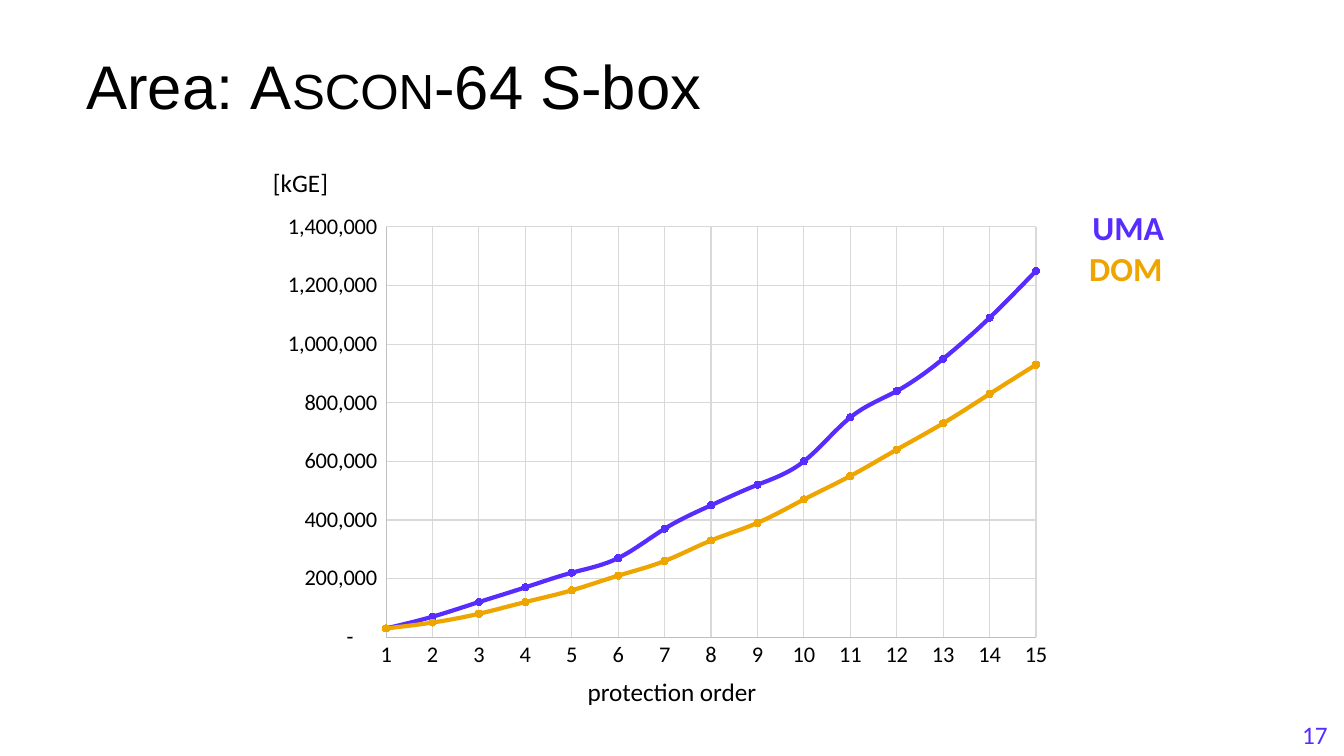
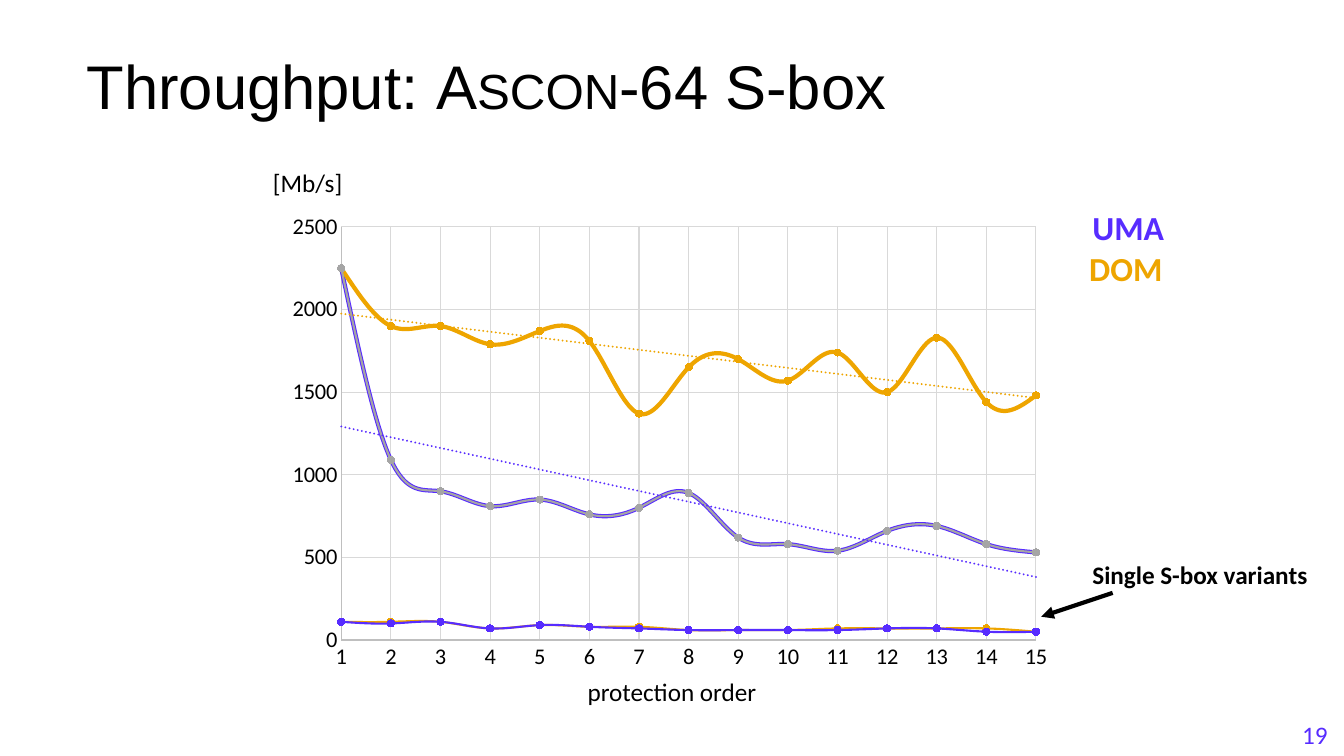
from dataclasses import dataclass

import lxml.etree
import pptx
import pptx.chart.data
import pptx.dml.color
import pptx.enum.chart
import pptx.enum.shapes
import pptx.enum.text
import pptx.oxml
import pptx.oxml.ns
import pptx.util

Cm, Pt = pptx.util.Cm, pptx.util.Pt
qn = pptx.oxml.ns.qn
LEFT = pptx.enum.text.PP_ALIGN.LEFT
CENTER = pptx.enum.text.PP_ALIGN.CENTER


@dataclass(frozen=True)
class Theme:
    ink: str = "000000"
    uma: str = "572CFF"
    dom: str = "EEA500"
    single: str = "A5A5A5"
    axis: str = "BFBFBF"
    grid: str = "D9D9D9"
    title_font: str = "Arial"
    body_font: str = "Calibri"
    title_size: int = 44
    legend_size: int = 24
    label_size: int = 18
    tick_size: int = 16
    thick: float = 3
    thin: float = 1.5
    hairline: float = 0.75
    marker_size: int = 5


@dataclass(frozen=True)
class Box:
    """A rectangle in centimetres."""
    left: float
    top: float
    width: float
    height: float

    def lengths(self):
        return [Cm(v) for v in (self.left, self.top, self.width, self.height)]

    def inner(self, left, top, width, height):
        """A box placed relative to this one."""
        return Box(self.left + left, self.top + top, width, height)


@dataclass(frozen=True)
class Curve:
    values: list
    color: str
    width: float
    trend: bool = False


THEME = Theme()
PAGE = Box(0, 0, 33.87, 19.05)
TITLE = PAGE.inner(1.93, 0.41, 31.93, 3.68)
PAGE_NUMBER = PAGE.inner(32.4, 18, 1.47, 1.02)
UNIT = PAGE.inner(6.63, 4.09, 3, 1.02)
X_CAPTION = PAGE.inner(0, 16.92, PAGE.width, 1.02)
LEGEND = PAGE.inner(27.2, 5.1, 3, 2.3)
SINGLE_NOTE = PAGE.inner(26.24, 13.97, 7.4, 1.57)

ORDERS = range(1, 16)
ACCOUNTING = '_-* #,##0_-;\\-* #,##0_-;_-* "-"??_-;_-@_-'
UMA_RATE = [2250, 1090, 900, 810, 850, 760, 800, 890, 620, 580, 540, 660,
            690, 580, 530]

AREA = {
    "number": 17,
    "topic": "Area: ",
    "unit": "[kGE]",
    "chart_box": PAGE.inner(6.35, 5.16, 20.45, 11.96),
    "plot_box": PAGE.inner(9.73, 5.72, 16.38, 10.34),
    "top": 1400000,
    "step": 200000,
    "number_format": ACCOUNTING,
    "curves": [
        Curve([30000, 50000, 80000, 120000, 160000, 210000, 260000, 330000,
               390000, 470000, 550000, 640000, 730000, 830000, 930000],
              THEME.dom, THEME.thick),
        Curve([30000, 70000, 120000, 170000, 220000, 270000, 370000, 450000,
               520000, 600000, 750000, 840000, 950000, 1090000, 1250000],
              THEME.uma, THEME.thick),
    ],
}
THROUGHPUT = {
    "number": 19,
    "topic": "Throughput: ",
    "unit": "[Mb/s]",
    "chart_box": PAGE.inner(6.99, 5.16, 19.81, 12.01),
    "plot_box": PAGE.inner(8.6, 5.72, 17.51, 10.41),
    "top": 2500,
    "step": 500,
    "number_format": "General",
    "curves": [
        Curve([110, 100, 110, 70, 90, 80, 70, 60, 60, 60, 60, 70, 70, 50, 50],
              THEME.uma, THEME.thin),
        Curve([110, 110, 110, 70, 90, 80, 80, 60, 60, 60, 70, 70, 70, 70, 50],
              THEME.dom, THEME.thin),
        Curve(UMA_RATE, THEME.single, THEME.thin),
        Curve([2250, 1900, 1900, 1790, 1870, 1810, 1370, 1650, 1700, 1570,
               1740, 1500, 1830, 1440, 1480], THEME.dom, THEME.thick, True),
        Curve(UMA_RATE, THEME.uma, THEME.thick, True),
    ],
}


def rgb(color):
    return pptx.dml.color.RGBColor.from_string(color)


def set_format(target, values):
    for attribute, value in values.items():
        setattr(target, attribute, value)


def set_font(font, size, color=THEME.ink, name=THEME.body_font, bold=False):
    set_format(font, {"size": Pt(size), "name": name, "bold": bold})
    font.color.rgb = rgb(color)


def set_line(line, color, width):
    line.color.rgb = rgb(color)
    line.width = Pt(width)


def add_text(slide, box, text, size, color=THEME.ink, bold=False, align=LEFT):
    frame = slide.shapes.add_textbox(*box.lengths()).text_frame
    frame.word_wrap = True
    paragraph = frame.paragraphs[0]
    paragraph.alignment = align
    run = paragraph.add_run()
    run.text = text
    set_font(run.font, size, color, bold=bold)


def add_title(slide, box, topic):
    frame = slide.shapes.add_textbox(*box.lengths()).text_frame
    set_format(frame, {"word_wrap": True,
                       "vertical_anchor": pptx.enum.text.MSO_ANCHOR.MIDDLE})
    paragraph = frame.paragraphs[0]
    paragraph.line_spacing = 0.9
    for text, caps in ((topic, "none"), ("Ascon", "small"), ("-64 S-box", "none")):
        run = paragraph.add_run()
        run.text = text
        set_font(run.font, THEME.title_size, name=THEME.title_font)
        run._r.get_or_add_rPr().set("cap", caps)


def add_legend(slide, box):
    row_height = 1.02
    for row, (name, color, shift) in enumerate(
            (("UMA", THEME.uma, 0.08), ("DOM", THEME.dom, 0))):
        add_text(slide, box.inner(shift, row * row_height, box.width - shift, 1.27),
                 name, THEME.legend_size, color, bold=True)


def place_plot(chart, chart_box, plot_box):
    """Fix the inner plot area at plot_box within the chart."""
    area = chart._chartSpace.chart.plotArea
    for old in area.findall(qn("c:layout")):
        area.remove(old)
    layout = lxml.etree.Element(qn("c:layout"))
    manual = lxml.etree.SubElement(layout, qn("c:manualLayout"))
    settings = {
        "layoutTarget": "inner", "xMode": "edge", "yMode": "edge",
        "x": (plot_box.left - chart_box.left) / chart_box.width,
        "y": (plot_box.top - chart_box.top) / chart_box.height,
        "w": plot_box.width / chart_box.width,
        "h": plot_box.height / chart_box.height,
    }
    for tag, value in settings.items():
        lxml.etree.SubElement(manual, qn("c:" + tag)).set("val", str(value))
    area.insert(0, layout)


def add_trend(series, color):
    """Add a dotted linear trend line to a series."""
    trend = pptx.oxml.parse_xml(
        f'<c:trendline {pptx.oxml.ns.nsdecls("c", "a")}>'
        f'<c:spPr><a:ln w="{Pt(THEME.thin)}" cap="rnd"><a:solidFill>'
        f'<a:srgbClr val="{color}"/></a:solidFill><a:prstDash val="sysDot"/></a:ln></c:spPr>'
        '<c:trendlineType val="linear"/><c:dispRSqr val="0"/><c:dispEq val="0"/>'
        '</c:trendline>')
    series._element.find(qn("c:xVal")).addprevious(trend)


def style_series(series, curve):
    set_line(series.format.line, curve.color, curve.width)
    marker = series.marker
    set_format(marker, {"style": pptx.enum.chart.XL_MARKER_STYLE.CIRCLE,
                        "size": THEME.marker_size})
    marker.format.fill.solid()
    marker.format.fill.fore_color.rgb = rgb(curve.color)
    set_line(marker.format.line, curve.color, THEME.hairline)
    element = series._element
    smooth = element.find(qn("c:smooth"))
    if smooth is None:
        smooth = lxml.etree.SubElement(element, qn("c:smooth"))
    smooth.set("val", "1")
    if curve.trend:
        add_trend(series, curve.color)


def style_axis(axis, low, high, step, number_format):
    no_tick = pptx.enum.chart.XL_TICK_MARK.NONE
    set_format(axis, {"minimum_scale": low, "maximum_scale": high,
                      "major_unit": step, "has_major_gridlines": True,
                      "major_tick_mark": no_tick, "minor_tick_mark": no_tick})
    set_format(axis.tick_labels, {"number_format": number_format,
                                  "number_format_is_linked": False})
    set_font(axis.tick_labels.font, THEME.tick_size)
    set_line(axis.format.line, THEME.axis, THEME.hairline)
    set_line(axis.major_gridlines.format.line, THEME.grid, THEME.hairline)


def add_curves(slide, chart_box, plot_box, curves, top, step, number_format):
    data = pptx.chart.data.XyChartData()
    for index, curve in enumerate(curves, 1):
        points = data.add_series(f"Series {index}")
        for order, value in zip(ORDERS, curve.values):
            points.add_data_point(order, value)
    chart = slide.shapes.add_chart(pptx.enum.chart.XL_CHART_TYPE.XY_SCATTER_SMOOTH,
                                   *chart_box.lengths(), data).chart
    set_format(chart, {"has_legend": False, "has_title": False})
    set_font(chart.font, THEME.tick_size)
    plot = chart.plots[0]
    plot.vary_by_categories = False
    for series, curve in zip(plot.series, curves):
        style_series(series, curve)
    style_axis(chart.category_axis, ORDERS[0], ORDERS[-1], 1, "General")
    style_axis(chart.value_axis, 0, top, step, number_format)
    place_plot(chart, chart_box, plot_box)


def add_single_note(slide, box):
    """Label the lowest curves and point an arrow at them."""
    add_text(slide, box.inner(1.04, 0, box.width - 1.04, 1.02),
             "Single S-box variants", THEME.label_size, bold=True)
    arrow = slide.shapes.add_connector(
        pptx.enum.shapes.MSO_CONNECTOR.STRAIGHT,
        Cm(box.left + 1.8), Cm(box.top + 0.97),
        Cm(box.left), Cm(box.top + box.height))
    set_line(arrow.line, THEME.ink, THEME.thick)
    lxml.etree.SubElement(arrow.line._get_or_add_ln(), qn("a:tailEnd")).set(
        "type", "triangle")
    lxml.etree.SubElement(arrow._element.spPr, qn("a:effectLst"))


def add_result_slide(deck, content):
    slide = deck.slides.add_slide(deck.slide_layouts[6])
    add_text(slide, PAGE_NUMBER, str(content["number"]), THEME.label_size,
             THEME.uma, align=CENTER)
    add_title(slide, TITLE, content["topic"])
    add_text(slide, UNIT, content["unit"], THEME.label_size)
    add_curves(slide, content["chart_box"], content["plot_box"], content["curves"],
               content["top"], content["step"], content["number_format"])
    add_legend(slide, LEGEND)
    add_text(slide, X_CAPTION, "protection order", THEME.label_size, align=CENTER)
    return slide


def main():
    deck = pptx.Presentation()
    set_format(deck, {"slide_width": Cm(PAGE.width), "slide_height": Cm(PAGE.height)})
    add_result_slide(deck, AREA)
    add_single_note(add_result_slide(deck, THROUGHPUT), SINGLE_NOTE)
    deck.save("out.pptx")


if __name__ == "__main__":
    main()
